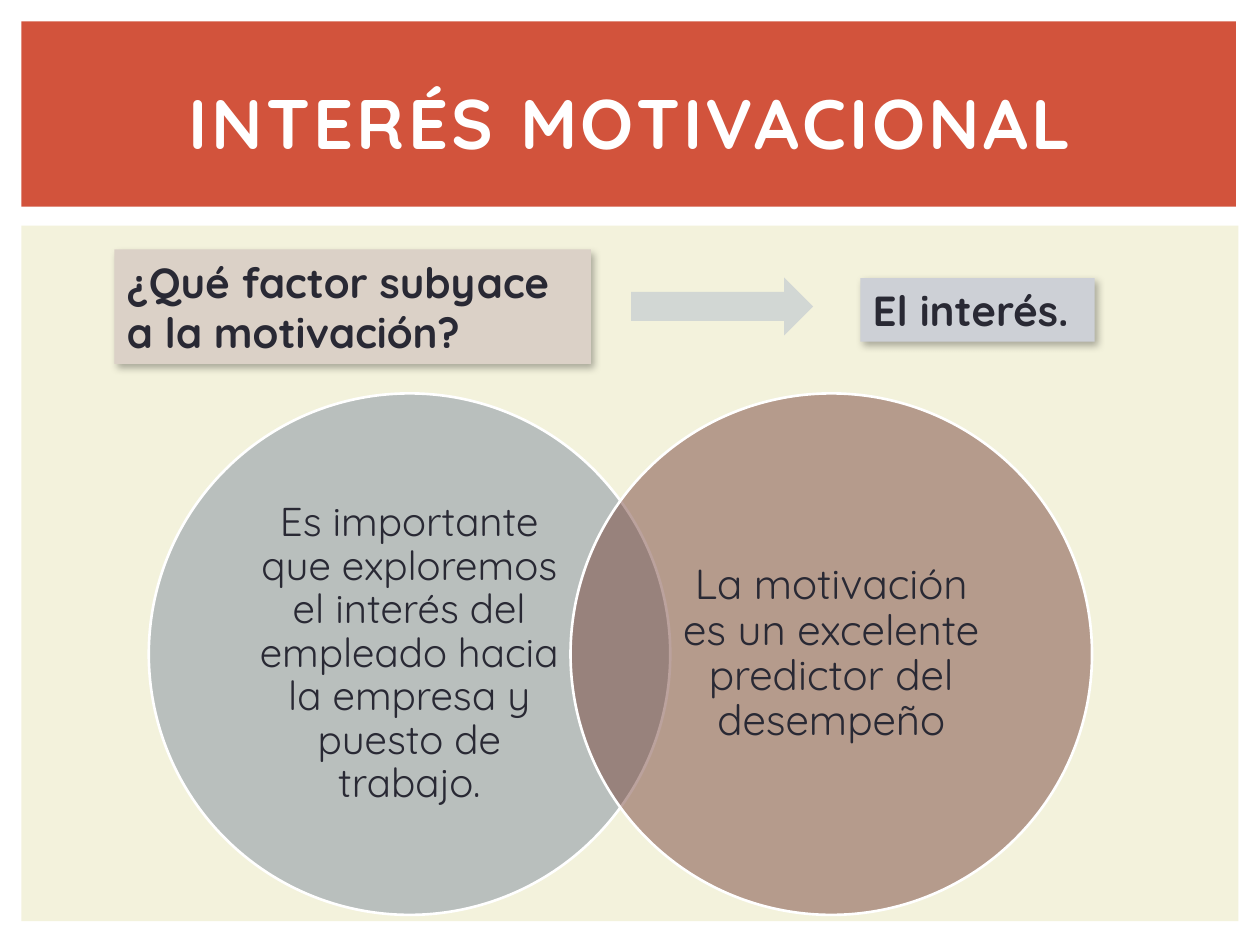
"""Build the slide on motivational interest: title band, question with answer, and two overlapping circles."""
from dataclasses import dataclass

from lxml.etree import SubElement
from pptx import Presentation
from pptx.dml.color import RGBColor
from pptx.enum.shapes import MSO_SHAPE
from pptx.enum.text import MSO_ANCHOR, MSO_AUTO_SIZE, PP_ALIGN
from pptx.oxml.ns import qn
from pptx.util import Pt


@dataclass(frozen=True)
class Theme:
    font: str = "Quicksand"
    ink: str = "292934"
    white: str = "FFFFFF"
    band: str = "D2533C"
    panel: str = "F3F2DC"
    arrow: str = "D2D7D4"
    shadow: str = "000000"
    title_size: int = 40
    label_size: int = 24


THEME = Theme()
TITLE = "INTERÉS MOTIVACIONAL"
TITLE_AREA = (30.24, 28.08, 660.24, 82.8)
BACKDROPS = [
    ((12.24, 128.88, 695.52, 397.44), THEME.panel),
    ((12.24, 12.24, 694.08, 105.84), THEME.band),
]
LABELS = [
    ("¿Qué factor subyace a la motivación?", (65.4, 142.5, 272.2, 65.4), "DBD1C7"),
    ("El interés.", (491.6, 159, 133.9, 36.35), "CDD0D6"),
]
ARROW_AREA = (360.7, 158.6, 103.9, 33.1)
CIRCLES = [
    ("Es importante que exploremos el interés del empleado hacia la empresa "
     "y puesto de trabajo.", "808DA0", 23),
    ("La motivación es un excelente predictor del desempeño", "79463D", 24),
]
CIRCLE_LEFT, CIRCLE_TOP, CIRCLE_SIZE, CIRCLE_STEP = 85, 224.8, 298, 241
CIRCLE_TEXT_SIZE = 211


def lengths(area):
    return [Pt(value) for value in area]


def add_filled(page, kind, area, color):
    shape = page.shapes.add_shape(kind, *lengths(area))
    shape.shadow.inherit = False
    shape.fill.solid()
    shape.fill.fore_color.rgb = RGBColor.from_string(color)
    shape.line.fill.background()
    return shape


def set_alpha(parent, percent):
    color = next(parent.iter(qn("a:srgbClr")))
    SubElement(color, qn("a:alpha"), val=str(percent * 1000))


def add_soft_shadow(shape):
    effects = shape._element.spPr.find(qn("a:effectLst"))
    shadow = SubElement(
        effects, qn("a:outerShdw"), blurRad=str(Pt(4.5)), dist=str(Pt(2.6)),
        dir=str(53 * 60000), algn="tl", rotWithShape="0")
    SubElement(shadow, qn("a:srgbClr"), val=THEME.shadow)
    set_alpha(shadow, 30)


def write(box, text, size, color=THEME.ink, bold=False, align=PP_ALIGN.CENTER):
    frame = box.text_frame
    frame.word_wrap = True
    frame.auto_size = MSO_AUTO_SIZE.NONE
    frame.vertical_anchor = MSO_ANCHOR.MIDDLE
    para = frame.paragraphs[0]
    para.alignment = align
    span = para.add_run()
    span.text = text
    span.font.name = THEME.font
    span.font.size = Pt(size)
    span.font.bold = bold
    span.font.color.rgb = RGBColor.from_string(color)
    return para, span


def add_circle(page, index, text, color, size):
    left = CIRCLE_LEFT + index * CIRCLE_STEP
    circle = add_filled(
        page, MSO_SHAPE.OVAL, (left, CIRCLE_TOP, CIRCLE_SIZE, CIRCLE_SIZE), color)
    set_alpha(circle._element.spPr, 50)
    circle.line.color.rgb = RGBColor.from_string(THEME.white)
    circle.line.width = Pt(1.5)

    inset = (CIRCLE_SIZE - CIRCLE_TEXT_SIZE) / 2
    area = (left + inset, CIRCLE_TOP + inset, CIRCLE_TEXT_SIZE, CIRCLE_TEXT_SIZE)
    box = page.shapes.add_textbox(*lengths(area))
    frame = box.text_frame
    frame.margin_left = frame.margin_right = Pt(16.5)
    frame.margin_top = frame.margin_bottom = Pt(2.2)
    para, _ = write(box, text, size)
    para.line_spacing = 0.9


def add_title(page):
    title = page.shapes.title
    title.left, title.top, title.width, title.height = lengths(TITLE_AREA)
    _, span = write(title, TITLE, THEME.title_size, THEME.white, bold=True)
    span.font._element.set("spc", "200")
    tree = page.shapes._spTree
    tree.remove(title._element)
    tree.append(title._element)


def main():
    deck = Presentation()
    deck.slide_width, deck.slide_height = Pt(720), Pt(540)
    page = deck.slides.add_slide(deck.slide_layouts[5])

    for area, color in BACKDROPS:
        add_filled(page, MSO_SHAPE.RECTANGLE, area, color)
    for index, circle in enumerate(CIRCLES):
        add_circle(page, index, *circle)
    add_title(page)
    for text, area, color in LABELS:
        label = add_filled(page, MSO_SHAPE.RECTANGLE, area, color)
        add_soft_shadow(label)
        write(label, text, THEME.label_size, bold=True, align=PP_ALIGN.LEFT)
    add_filled(page, MSO_SHAPE.RIGHT_ARROW, ARROW_AREA, THEME.arrow)

    deck.save("out.pptx")


if __name__ == "__main__":
    main()
